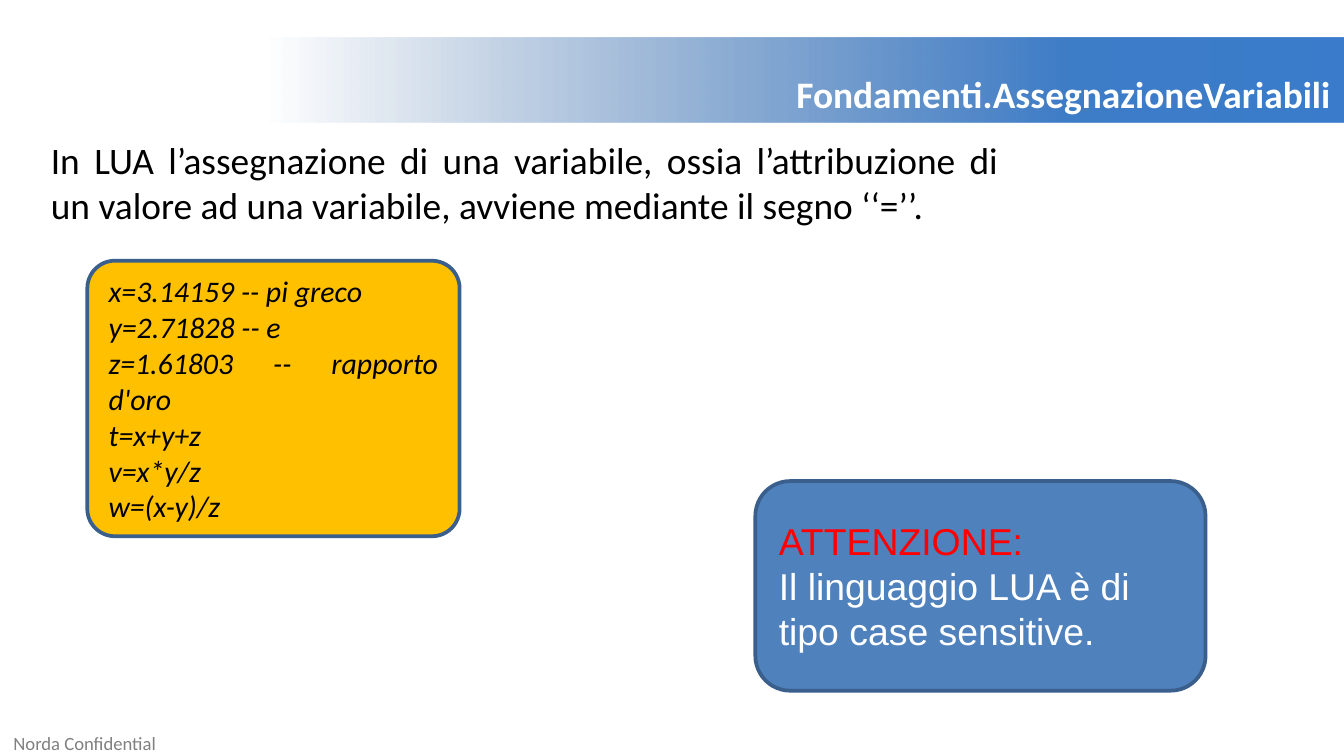
from dataclasses import dataclass

from lxml import etree
from pptx import Presentation
from pptx import util as u
from pptx.dml.color import RGBColor
from pptx.enum import shapes, text
from pptx.oxml.ns import qn


@dataclass(frozen=True)
class Theme:
    black: str = "000000"
    white: str = "FFFFFF"
    grey: str = "808080"
    red: str = "FF0000"
    amber: str = "FFC000"
    blue: str = "4F81BD"
    outline: str = "3A5F8C"
    # position in percent, colour, opacity in percent
    banner: tuple = ((20, "2F5F99", 0), (80, "3D7CC7", 100), (100, "3A7CCB", 100))
    body_font: str = "Calibri"
    alert_font: str = "Arial"
    large: int = 20
    code: int = 16
    small: int = 10


THEME = Theme()
ALIGN = text.PP_ALIGN
ANCHOR = text.MSO_ANCHOR


def inches(box):
    return [u.Inches(n) for n in box]


def add_run(p, words, size, color, font=THEME.body_font, bold=False, italic=False):
    r = p.add_run()
    r.text = words
    r.font.name = font
    r.font.size = u.Pt(size)
    r.font.color.rgb = RGBColor.from_string(color)
    r.font.bold = bold
    r.font.italic = italic


def text_frame(sp, anchor):
    tf = sp.text_frame
    tf.word_wrap = True
    tf.vertical_anchor = anchor
    return tf


def fill_gradient(sp, stops):
    """Fill left to right; XML is needed for the opacity of each stop."""
    sp.fill.gradient()
    sp.fill.gradient_angle = 0
    gs_list = sp.fill._xPr.find(qn("a:gradFill")).find(qn("a:gsLst"))
    for gs in list(gs_list):
        gs_list.remove(gs)
    for pos, color, opacity in stops:
        gs = etree.SubElement(gs_list, qn("a:gs"), pos=str(pos * 1000))
        clr = etree.SubElement(gs, qn("a:srgbClr"), val=color)
        if opacity < 100:
            etree.SubElement(clr, qn("a:alpha"), val=str(opacity * 1000))


def add_footer(s, box):
    tf = text_frame(s.shapes.add_textbox(*inches(box)), ANCHOR.MIDDLE)
    tf.margin_left = tf.margin_right = tf.margin_top = tf.margin_bottom = 0
    add_run(tf.paragraphs[0], "Norda Confidential", THEME.small, THEME.grey)


def add_intro(s, box):
    tf = text_frame(s.shapes.add_textbox(*inches(box)), ANCHOR.TOP)
    p = tf.paragraphs[0]
    p.alignment = ALIGN.JUSTIFY
    add_run(p, "In LUA l’assegnazione di una variabile, ossia l’attribuzione di "
               "un valore ad una variabile, avviene mediante il segno ‘‘=’’.",
            THEME.large, THEME.black)


def add_title_banner(s, box):
    sp = s.shapes.add_shape(shapes.MSO_SHAPE.RECTANGLE, *inches(box))
    sp.shadow.inherit = False
    sp.line.fill.background()
    fill_gradient(sp, THEME.banner)
    p = text_frame(sp, ANCHOR.BOTTOM).paragraphs[0]
    p.alignment = ALIGN.RIGHT
    add_run(p, "Fondamenti.AssegnazioneVariabili", THEME.large, THEME.white, bold=True)


def add_card(s, box, fill):
    """Add an outlined rounded box and return it."""
    sp = s.shapes.add_shape(shapes.MSO_SHAPE.ROUNDED_RECTANGLE, *inches(box))
    sp.shadow.inherit = False
    sp.fill.solid()
    sp.fill.fore_color.rgb = RGBColor.from_string(fill)
    sp.line.color.rgb = RGBColor.from_string(THEME.outline)
    sp.line.width = u.Pt(2)
    return sp


def add_warning(s, box):
    sp = add_card(s, box, THEME.blue)
    p = text_frame(sp, ANCHOR.MIDDLE).paragraphs[0]
    p.alignment = ALIGN.LEFT
    add_run(p, "ATTENZIONE:", THEME.large, THEME.red, THEME.alert_font)
    p.add_line_break()
    add_run(p, "Il linguaggio LUA è di tipo case sensitive.",
            THEME.large, THEME.white, THEME.alert_font)


def add_code(s, box, lines):
    sp = add_card(s, box, THEME.amber)
    sp.adjustments[0] = 0.1
    tf = text_frame(sp, ANCHOR.MIDDLE)
    for i, line in enumerate(lines):
        p = tf.add_paragraph() if i else tf.paragraphs[0]
        p.alignment = ALIGN.JUSTIFY
        add_run(p, line, THEME.code, THEME.black, italic=True)


def main():
    prs = Presentation()
    prs.slide_width = u.Inches(10)
    prs.slide_height = prs.slide_width * 9 // 16
    s = prs.slides.add_slide(prs.slide_layouts[6])
    add_footer(s, (0.1, 5.43, 1.81, 0.2))
    add_intro(s, (0.28, 0.97, 7.25, 0.77))
    add_title_banner(s, (0, 0.28, 10, 0.63))
    add_warning(s, (5.62, 3.58, 3.35, 1.56))
    add_code(s, (0.65, 1.94, 2.77, 2.05), [
        "x=3.14159 -- pi greco",
        "y=2.71828 -- e",
        "z=1.61803 -- rapporto d'oro",
        "t=x+y+z",
        "v=x*y/z",
        "w=(x-y)/z",
    ])
    prs.save("out.pptx")


if __name__ == "__main__":
    main()
